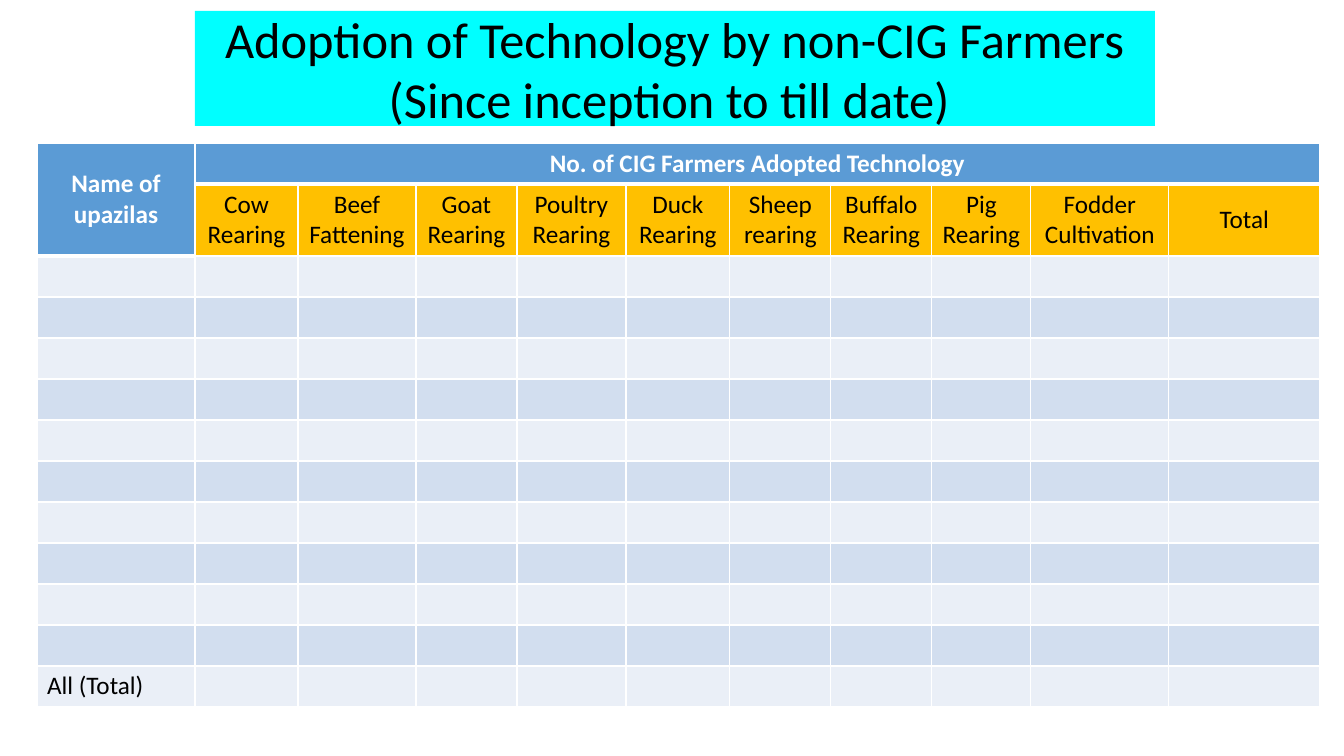
from lxml import etree
from pptx import Presentation
from pptx.dml.color import RGBColor
from pptx.enum.shapes import MSO_SHAPE
from pptx.enum.text import MSO_ANCHOR, PP_ALIGN
from pptx.oxml.ns import qn
from pptx.util import Emu, Pt

RECTANGLE = MSO_SHAPE.RECTANGLE
MIDDLE, TOP = MSO_ANCHOR.MIDDLE, MSO_ANCHOR.TOP
CENTER, LEFT = PP_ALIGN.CENTER, PP_ALIGN.LEFT

EMU_PER_PX = 914400 / 100.8
COLORS = {
    "black": "000000",
    "white": "FFFFFF",
    "cyan": "00FFFF",
    "blue": "5B9BD5",
    "gold": "FFC000",
    "light": "EAEFF7",
    "dark": "D2DEEF",
}

TITLE = "Adoption of Technology by non-CIG Farmers (Since inception to till date) "
ACTIVITIES = [
    "Cow Rearing", "Beef Fattening", "Goat Rearing", "Poultry Rearing",
    "Duck Rearing", "Sheep rearing", "Buffalo Rearing", "Pig Rearing",
    "Fodder Cultivation", "Total",
]
COLUMN_WIDTHS = [158, 103, 118, 101, 109, 104, 101, 101, 99, 138, 151]
ROW_HEIGHTS = [41, 72] + [41] * 11
LAST_ROW = len(ROW_HEIGHTS) - 1


def px(length):
    return Emu(round(length * EMU_PER_PX))


def rgb(name):
    return RGBColor.from_string(COLORS[name])


def is_heading(row, column):
    return row == 0 or (row == 1 and column == 0)


class SlideBuilder:
    font_name = "Calibri"

    def __init__(self, page):
        self.page = page

    def add_text(self, frame, text, size=18, color="black", bold=False, align=CENTER):
        para = frame.paragraphs[0]
        para.alignment = align
        span = para.add_run()
        span.text = text
        formats = {"name": self.font_name, "size": Pt(size), "bold": bold}
        for key, value in formats.items():
            setattr(span.font, key, value)
        span.font.color.rgb = rgb(color)

    def banner(self, left, top, width, height, text):
        box = self.page.shapes.add_shape(RECTANGLE, px(left), px(top), px(width), px(height))
        box.shadow.inherit = False
        box.fill.solid()
        box.fill.fore_color.rgb = rgb("cyan")
        box.line.fill.background()
        box.text_frame.word_wrap = True
        box.text_frame.vertical_anchor = MIDDLE
        self.add_text(box.text_frame, text, size=36)

    def table(self, left, top, widths, heights):
        frame = self.page.shapes.add_table(
            len(heights), len(widths), px(left), px(top), px(sum(widths)), px(sum(heights)))
        grid = frame.table
        grid.first_row = grid.horz_banding = False
        for column, width in zip(grid.columns, widths):
            column.width = px(width)
        for row, height in zip(grid.rows, heights):
            row.height = px(height)
        return grid

    def border(self, cell, side, points):
        line = etree.SubElement(cell._tc.get_or_add_tcPr(), qn(f"a:ln{side}"), w=str(Pt(points)))
        fill = etree.SubElement(line, qn("a:solidFill"))
        etree.SubElement(fill, qn("a:srgbClr"), val=COLORS["white"])

    def style_cell(self, cell, fill, top_line, bottom_line):
        for side, points in {"L": 1, "R": 1, "T": top_line, "B": bottom_line}.items():
            self.border(cell, side, points)
        cell.fill.solid()
        cell.fill.fore_color.rgb = rgb(fill)

    def label(self, cell, text, anchor=MIDDLE, **formats):
        cell.vertical_anchor = anchor
        self.add_text(cell.text_frame, text, **formats)


def cell_fill(row, column):
    if is_heading(row, column):
        return "blue"
    if row == 1:
        return "gold"
    return "dark" if row % 2 else "light"


def main():
    deck = Presentation()
    deck.slide_width, deck.slide_height = px(1344), px(756)
    builder = SlideBuilder(deck.slides.add_slide(deck.slide_layouts[6]))

    grid = builder.table(37, 143, COLUMN_WIDTHS, ROW_HEIGHTS)
    for row in range(len(ROW_HEIGHTS)):
        for column in range(len(COLUMN_WIDTHS)):
            top_line = 3 if row and is_heading(row - 1, column) else 1
            bottom_line = 3 if is_heading(row, column) else 1
            builder.style_cell(
                grid.cell(row, column), cell_fill(row, column), top_line, bottom_line)

    grid.cell(0, 0).merge(grid.cell(1, 0))
    grid.cell(0, 1).merge(grid.cell(0, len(ACTIVITIES)))
    heading = {"color": "white", "bold": True}
    builder.label(grid.cell(0, 0), "Name of upazilas", **heading)
    builder.label(grid.cell(0, 1), "No. of CIG Farmers Adopted Technology", TOP, **heading)
    for column, activity in enumerate(ACTIVITIES, 1):
        builder.label(grid.cell(1, column), activity)
    builder.label(grid.cell(LAST_ROW, 0), "All (Total)", TOP, align=LEFT)

    builder.banner(195, 11, 960, 115, TITLE)
    deck.save("out.pptx")


if __name__ == "__main__":
    main()
